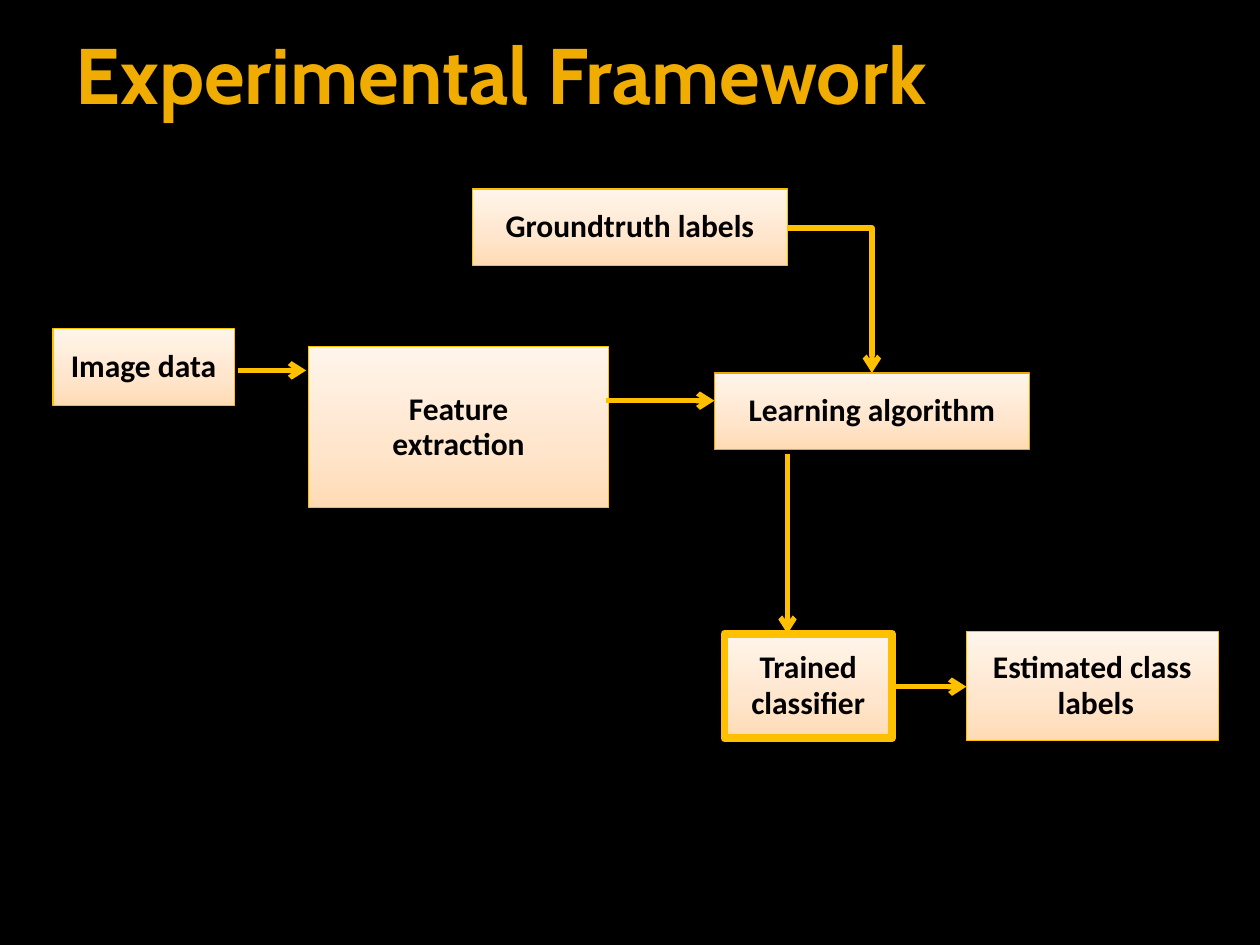
from copy import deepcopy

from lxml import etree
from pptx import Presentation
from pptx import util as u
from pptx.dml.color import RGBColor
from pptx.enum import shapes, text
from pptx.oxml import ns

BLACK = RGBColor(0, 0, 0)
TITLE_GOLD = RGBColor(0xF0, 0xAD, 0x00)
GOLD = RGBColor(0xFF, 0xC0, 0x00)
DARK_GOLD = RGBColor(0xEB, 0xA9, 0x00)
PEACH_STOPS = [
    (0, RGBColor(0xFF, 0xDB, 0xB5)),
    (0.35, RGBColor(0xFF, 0xE5, 0xCB)),
    (1, RGBColor(0xFF, 0xF5, 0xEB)),
]

WIDTH, HEIGHT = u.Inches(10), u.Inches(7.5)
COLUMNS, ROWS = 100, 75

BOXES = [
    (["Image data"], (4.2, 26.1, 14.4, 6.1), {}),
    (["Groundtruth labels"], (37.5, 15, 25, 6.1), {}),
    (["Learning algorithm"], (56.7, 29.6, 25, 6.1), {"color": DARK_GOLD}),
    (["Feature", "extraction"], (24.5, 27.5, 23.8, 12.8), {}),
    (["Trained", "classifier"], (57.5, 50.3, 13.3, 8.3), {"weight": 4.5}),
    (["Estimated class", " labels"], (76.7, 50.1, 20, 8.7), {}),
]

ARROWS = [
    ((18.9, 29.4), (24.3, 29.4)),
    ((48.1, 31.8), (56.7, 31.8)),
    ((62.5, 36), (62.5, 50.3)),
    ((70.8, 54.5), (76.7, 54.5)),
]


def column(number):
    return round(WIDTH * number / COLUMNS)


def row(number):
    return round(HEIGHT * number / ROWS)


def place(left, top, width, height):
    return column(left), row(top), column(width), row(height)


def write(frame, lines, *, font, size, color, align, insets, wrap):
    frame.auto_size = text.MSO_AUTO_SIZE.NONE
    frame.word_wrap = wrap
    frame.vertical_anchor = text.MSO_ANCHOR.MIDDLE
    (frame.margin_left, frame.margin_top,
     frame.margin_right, frame.margin_bottom) = map(u.Inches, insets)
    frame.text = "\n".join(lines)
    for paragraph in frame.paragraphs:
        paragraph.alignment = align
        paragraph.line_spacing = 0.93
        paragraph.space_before = u.Pt(0)
        run_font = paragraph.runs[0].font
        run_font.name = font
        run_font.size = u.Pt(size)
        run_font.bold = True
        run_font.color.rgb = color


def add_title(slide, title):
    shape = slide.shapes.title
    shape.left, shape.top, shape.width, shape.height = place(5, 0, 90, 12.4)
    write(shape.text_frame, [title], font="Cabin", size=45, color=TITLE_GOLD,
          align=text.PP_ALIGN.LEFT, insets=(0.1, 0.05, 0.05, 0.05), wrap=True)


def fill_peach(shape):
    shape.fill.gradient()
    shape.fill.gradient_angle = 90
    stop_list = shape._element.spPr.find(".//" + ns.qn("a:gsLst"))
    stop_list.append(deepcopy(stop_list[-1]))
    for stop, (position, color) in zip(shape.fill.gradient_stops, PEACH_STOPS):
        stop.position = position
        stop.color.rgb = color


def add_box(slide, lines, area, color=GOLD, weight=0.75):
    shape = slide.shapes.add_shape(shapes.MSO_SHAPE.RECTANGLE, *place(*area))
    shape.shadow.inherit = False
    fill_peach(shape)
    shape.line.color.rgb = color
    shape.line.width = u.Pt(weight)
    write(shape.text_frame, lines, font="Calibri", size=18, color=BLACK,
          align=text.PP_ALIGN.CENTER, insets=(0.18,) * 4, wrap=False)


def add_arrow(slide, start, end, kind=shapes.MSO_CONNECTOR.STRAIGHT):
    connector = slide.shapes.add_connector(
        kind, column(start[0]), row(start[1]), column(end[0]), row(end[1]))
    connector.line.color.rgb = GOLD
    connector.line.width = u.Pt(3)
    properties = connector._element.spPr
    etree.SubElement(connector.line._get_or_add_ln(), ns.qn("a:tailEnd"), type="arrow")
    etree.SubElement(properties, ns.qn("a:effectLst"))
    return connector


def add_corner_arrow(slide, start, end):
    connector = add_arrow(slide, start, end, shapes.MSO_CONNECTOR.ELBOW)
    geometry = connector._element.spPr.find(ns.qn("a:prstGeom"))
    geometry.set("prst", "bentConnector2")


def main():
    presentation = Presentation()
    presentation.slide_width, presentation.slide_height = WIDTH, HEIGHT
    slide = presentation.slides.add_slide(presentation.slide_layouts[5])
    slide.background.fill.solid()
    slide.background.fill.fore_color.rgb = BLACK
    add_title(slide, "Experimental Framework")
    for lines, area, style in BOXES:
        add_box(slide, lines, area, **style)
    for start, end in ARROWS:
        add_arrow(slide, start, end)
    add_corner_arrow(slide, (62.5, 18.1), (69.2, 29.6))
    presentation.save("out.pptx")


if __name__ == "__main__":
    main()
